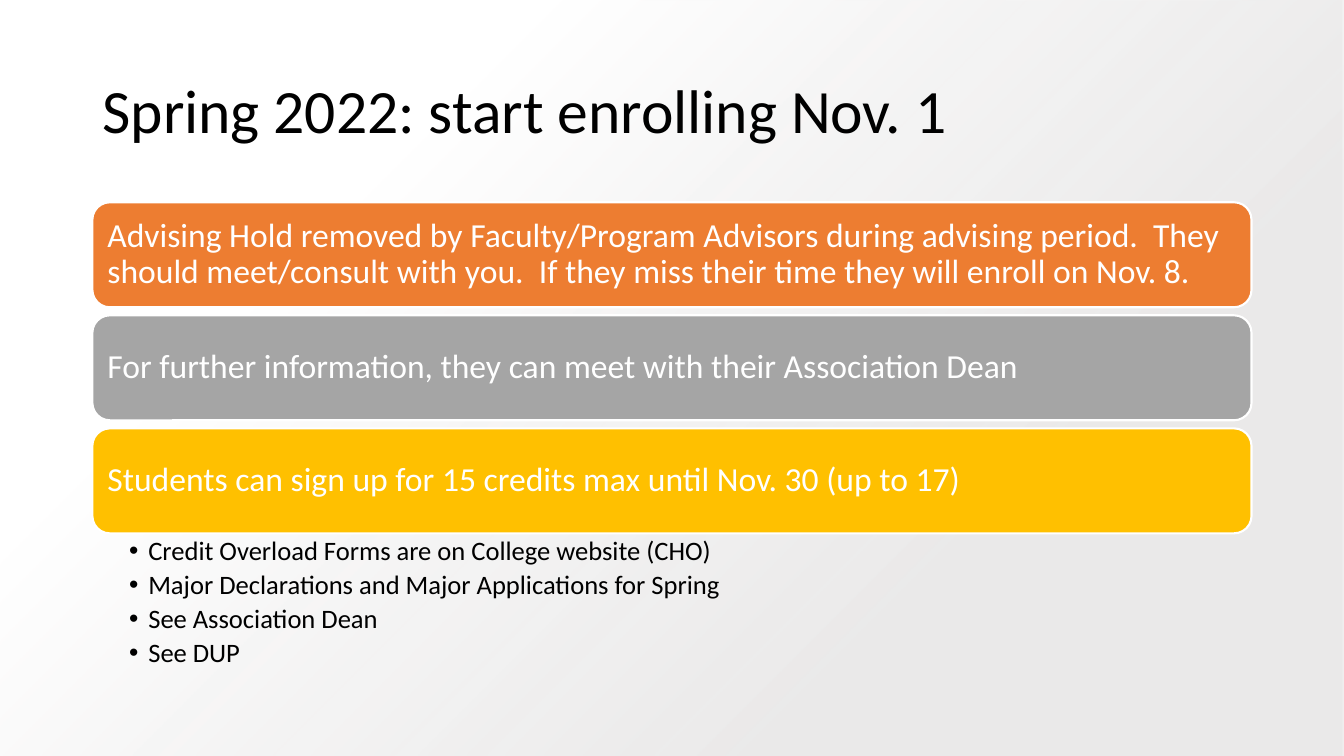
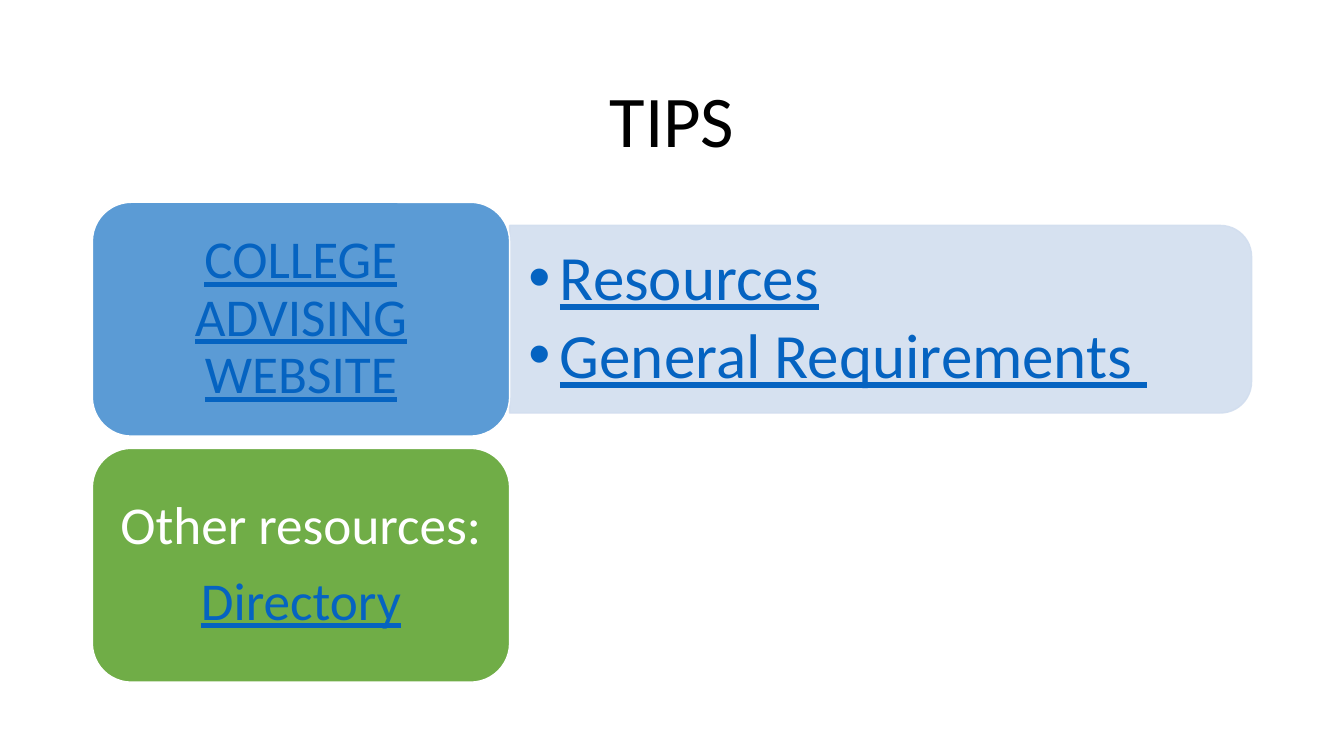
from pptx import Presentation
from pptx.dml.color import RGBColor
from pptx.enum.shapes import MSO_SHAPE as SHAPE
from pptx.enum.text import MSO_ANCHOR as ANCHOR, MSO_AUTO_SIZE as AUTO_SIZE, PP_ALIGN as ALIGN
from pptx.oxml import parse_xml
from pptx.oxml.ns import nsdecls, qn
from pptx.oxml.xmlchemy import OxmlElement
from pptx.util import Pt

FONT = "Calibri"
COLOURS = {
    "black": "000000", "white": "FFFFFF", "orange": "ED7D31", "grey": "A5A5A5",
    "gold": "FFC000", "blue": "5B9BD5", "green": "70AD47", "pale blue": "D2DEEF",
    "link": "0563C1", "light grey": "E7E6E6",
}
SLIDE_WIDTH, SLIDE_HEIGHT = 960, 540
LEFT, WIDTH = 66, 828
TITLE_BOTTOM = 133
CONTENT_TOP = 144.5


def rgb(name):
    return RGBColor.from_string(COLOURS[name])


def add_run(para, text, size, colour, underline=False):
    span = para.add_run()
    span.text = text
    span.font.name = FONT
    span.font.size = Pt(size)
    span.font.color.rgb = rgb(colour)
    if underline:
        span.font.underline = True


def set_bullet(para, indent):
    properties = para._p.get_or_add_pPr()
    properties.set("marL", str(Pt(indent)))
    properties.set("indent", str(-Pt(indent)))
    for tag, key, value in (("a:buFont", "typeface", "Arial"), ("a:buChar", "char", "•")):
        element = OxmlElement(tag)
        element.set(key, value)
        properties.append(element)


def set_text(shape, lines, size, space, align=ALIGN.LEFT, insets=(7.2, 7.2),
             anchor=ANCHOR.MIDDLE, bullet=None):
    """Write (text, colour) lines; link-coloured ones are underlined, bullet is the indent."""
    frame = shape.text_frame
    frame.word_wrap = True
    frame.auto_size = AUTO_SIZE.NONE
    frame.vertical_anchor = anchor
    frame.margin_left = frame.margin_right = Pt(insets[0])
    frame.margin_top = frame.margin_bottom = Pt(insets[1])
    for index, (text, colour) in enumerate(lines):
        para = frame.add_paragraph() if index else frame.paragraphs[0]
        para.alignment = align
        para.line_spacing = 0.9
        para.space_before = Pt(0)
        para.space_after = Pt(space)
        if bullet:
            set_bullet(para, bullet)
        add_run(para, text, size, colour, underline=colour == "link")


def add_box(slide, kind, left, top, width, height, fill, line, line_width):
    box = slide.shapes.add_shape(kind, Pt(left), Pt(top), Pt(width), Pt(height))
    box.shadow.inherit = False
    box.fill.solid()
    box.fill.fore_color.rgb = rgb(fill)
    box.line.color.rgb = rgb(line)
    box.line.width = Pt(line_width)
    return box


def add_text_box(slide, left, top, width, height, lines, size, space, **options):
    box = slide.shapes.add_textbox(Pt(left), Pt(top), Pt(width), Pt(height))
    set_text(box, lines, size, space, **options)


def set_opacity(box, percent):
    for colour in box._element.spPr.iter(qn("a:srgbClr")):
        alpha = OxmlElement("a:alpha")
        alpha.set("val", str(percent * 1000))
        colour.append(alpha)


def add_backdrop(slide):
    """Cover the slide with a glow that spreads from the bottom right corner."""
    backdrop = slide.shapes.add_shape(SHAPE.RECTANGLE, 0, 0, Pt(SLIDE_WIDTH), Pt(SLIDE_HEIGHT))
    backdrop.shadow.inherit = False
    backdrop.line.fill.background()
    backdrop.fill.gradient()
    properties = backdrop._element.spPr
    gradient = parse_xml(
        f'<a:gradFill {nsdecls("a")} rotWithShape="1"><a:gsLst>'
        f'<a:gs pos="28000"><a:srgbClr val="{COLOURS["light grey"]}">'
        '<a:alpha val="84000"/></a:srgbClr></a:gs>'
        f'<a:gs pos="74000"><a:srgbClr val="{COLOURS["white"]}"/></a:gs></a:gsLst>'
        '<a:path path="circle"><a:fillToRect l="100000" t="100000"/></a:path></a:gradFill>')
    properties.replace(properties.find(qn("a:gradFill")), gradient)
    # The title placeholder comes first on a new slide, so the backdrop goes beneath it.
    slide.shapes._spTree.insert(2, backdrop._element)


def add_title_slide(deck, text, size, top, align):
    slide = deck.slides.add_slide(deck.slide_layouts[5])
    title = slide.shapes.title
    title.left, title.top = Pt(LEFT), Pt(top)
    title.width, title.height = Pt(WIDTH), Pt(TITLE_BOTTOM - top)
    set_text(title, [(text, "black")], size, 0, align=align, insets=(7.2, 3.6))
    return slide


def build_enrolment(deck):
    slide = add_title_slide(deck, "Spring 2022: start enrolling Nov. 1", 44, 28.75, ALIGN.LEFT)
    add_backdrop(slide)
    bars = [
        ("orange", "Advising Hold removed by Faculty/Program Advisors during advising period.  "
                   "They should meet/consult with you.  If they miss their time they will "
                   "enroll on Nov. 8."),
        ("grey", "For further information, they can meet with their Association Dean"),
        ("gold", "Students can sign up for 15 credits max until Nov. 30 (up to 17)"),
    ]
    height, gap = 75, 5.75
    for index, (fill, text) in enumerate(bars):
        top = CONTENT_TOP + index * (height + gap)
        bar = add_box(slide, SHAPE.ROUNDED_RECTANGLE, LEFT, top, WIDTH, height,
                      fill, "white", 1.5)
        set_text(bar, [(text, "white")], 24, 8.4)
    notes = ["Credit Overload Forms are on College website (CHO)",
             "Major Declarations and Major Applications for Spring",
             "See Association Dean", "See DUP"]
    add_text_box(slide, LEFT, 381.5, WIDTH, 104, [(note, "black") for note in notes], 19, 3.8,
                 insets=(26.3, 2.2), anchor=ANCHOR.TOP, bullet=13.7)


def build_tips(deck):
    slide = add_title_slide(deck, "TIPS", 52, 44, ALIGN.CENTER)
    tile_width, tile_height, gap = 298, 167, 8.75
    panel_left, panel_width, panel_height = LEFT + tile_width, WIDTH - tile_width, 134
    middle = CONTENT_TOP + tile_height / 2

    # The panel is drawn upright and turned so that its round corners face right.
    panel = add_box(slide, SHAPE.ROUND_2_SAME_RECTANGLE,
                    panel_left + (panel_width - panel_height) / 2, middle - panel_width / 2,
                    panel_height, panel_width, "pale blue", "pale blue", 1)
    panel.rotation = 90
    set_opacity(panel, 90)
    add_text_box(slide, panel_left, middle - 60.5, 523.5, 121,
                 [("Resources", "link"), ("General Requirements ", "link")], 45, 6.75,
                 insets=(13.5, 6.75), bullet=22.5)

    tiles = [
        ("blue", [("COLLEGE ADVISING WEBSITE", "link")]),
        ("green", [("Other resources:", "white"), ("Directory", "link")]),
    ]
    for index, (fill, lines) in enumerate(tiles):
        top = CONTENT_TOP + index * (tile_height + gap)
        tile = add_box(slide, SHAPE.ROUNDED_RECTANGLE, LEFT, top, tile_width, tile_height,
                       fill, "white", 1)
        set_text(tile, lines, 38, 13.3, align=ALIGN.CENTER, insets=(11.4, 5.7))


def main():
    deck = Presentation()
    deck.slide_width, deck.slide_height = Pt(SLIDE_WIDTH), Pt(SLIDE_HEIGHT)
    build_enrolment(deck)
    build_tips(deck)
    deck.save("out.pptx")


if __name__ == "__main__":
    main()
